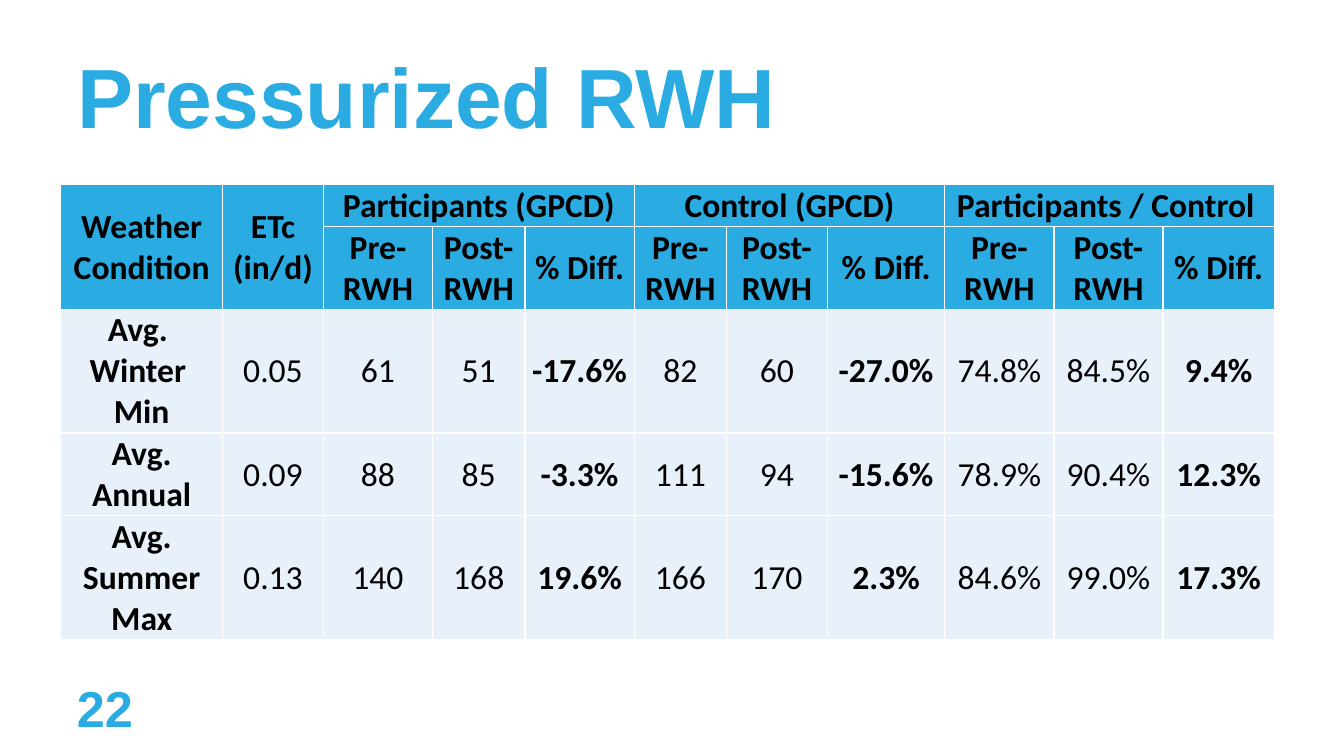
from dataclasses import dataclass

from lxml import etree
from pptx import Presentation
from pptx.dml.color import RGBColor
from pptx.enum.text import MSO_ANCHOR, MSO_AUTO_SIZE, PP_ALIGN
from pptx.oxml.ns import qn
from pptx.util import Cm, Pt

BLUE = RGBColor(0x2A, 0xAC, 0xE3)
PALE = RGBColor(0xE8, 0xF1, 0xFA)
BLACK = RGBColor(0, 0, 0)
WHITE = RGBColor(0xFF, 0xFF, 0xFF)
LEFT, CENTER = PP_ALIGN.LEFT, PP_ALIGN.CENTER
MIDDLE, TOP = MSO_ANCHOR.MIDDLE, MSO_ANCHOR.TOP
FIXED = MSO_AUTO_SIZE.NONE

LINE = 1.03  # height of one text line in the table, cm
WIDTHS = (4.08, 2.54, 2.75, 2.33, 2.75, 2.33, 2.54, 2.96, 2.75, 2.75, 2.8)
HEADS = ("Weather Condition", "ETc (in/d)")
GROUPS = ("Participants (GPCD)", "Control (GPCD)", "Participants / Control ")
PARTS = ("Pre-RWH", "Post-RWH", "% Diff.")


@dataclass
class Season:
    name: str
    lines: int
    values: tuple[str, ...]


SEASONS = (
    Season("Avg. \nWinter \nMin", 3,
           ("0.05", "61", "51", "-17.6%", "82", "60", "-27.0%",
            "74.8%", "84.5%", "9.4%")),
    Season("Avg. Annual", 2,
           ("0.09", "88", "85", "-3.3%", "111", "94", "-15.6%",
            "78.9%", "90.4%", "12.3%")),
    Season("Avg. Summer Max", 3,
           ("0.13", "140", "168", "19.6%", "166", "170", "2.3%",
            "84.6%", "99.0%", "17.3%")),
)


def write(frame, text: str, *, size: int, font: str, color: RGBColor,
          bold: bool = True, align=LEFT, spacing: float = 1.0) -> None:
    frame.word_wrap = True
    frame.text = text
    for para in frame.paragraphs:
        para.alignment = align
        para.line_spacing = spacing
        for run in para.runs:
            run.font.size = Pt(size)
            run.font.name = font
            run.font.bold = bold
            run.font.color.rgb = color


def edge(cell) -> None:
    """Give a cell a thin white line on all four sides."""
    props = cell._tc.get_or_add_tcPr()
    for side in ("lnL", "lnR", "lnT", "lnB"):
        line = etree.SubElement(props, qn(f"a:{side}"), w=str(Pt(1)))
        fill = etree.SubElement(line, qn("a:solidFill"))
        etree.SubElement(fill, qn("a:srgbClr"), val=str(WHITE))


def fill_cell(cell, text: str, bold: bool) -> None:
    write(cell.text_frame, text, size=24, font="Calibri", color=BLACK,
          bold=bold, align=CENTER)


def add_grid(slide) -> None:
    heights = [LINE * n for n in (1, 2, *(s.lines for s in SEASONS))]
    grid = slide.shapes.add_table(
        len(heights), len(WIDTHS), Cm(1.53), Cm(4.65),
        Cm(sum(WIDTHS)), Cm(sum(heights))).table
    for col, width in zip(grid.columns, WIDTHS):
        col.width = Cm(width)
    for index, height in enumerate(heights):
        grid.rows[index].height = Cm(height)
        for cell in grid.rows[index].cells:
            edge(cell)
            cell.fill.solid()
            cell.fill.fore_color.rgb = BLUE if index < 2 else PALE
            cell.vertical_anchor = MIDDLE
            cell.margin_left = cell.margin_right = cell.margin_top = Cm(0.02)
            cell.margin_bottom = 0

    for col, text in enumerate(HEADS):
        grid.cell(0, col).merge(grid.cell(1, col))
        fill_cell(grid.cell(0, col), text, True)
    for index, group in enumerate(GROUPS):
        first = len(HEADS) + index * len(PARTS)
        grid.cell(0, first).merge(grid.cell(0, first + len(PARTS) - 1))
        fill_cell(grid.cell(0, first), group, True)
        for step, part in enumerate(PARTS):
            fill_cell(grid.cell(1, first + step), part, True)
    for row, season in enumerate(SEASONS, 2):
        fill_cell(grid.cell(row, 0), season.name, True)
        for col, value in enumerate(season.values, 1):
            fill_cell(grid.cell(row, col), value, col > 1 and col % 3 == 1)


def main() -> None:
    deck = Presentation()
    deck.slide_width, deck.slide_height = Cm(33.87), Cm(19.05)
    slide = deck.slides.add_slide(deck.slide_layouts[5])

    title = slide.shapes.title
    title.left, title.top = Cm(1.69), Cm(1.27)
    title.width, title.height = Cm(30.48), Cm(2.54)
    title.text_frame.auto_size = FIXED
    title.text_frame.vertical_anchor = MIDDLE
    write(title.text_frame, "Pressurized RWH", size=60, font="Arial",
          color=BLUE, spacing=0.9)

    add_grid(slide)

    page = slide.shapes.add_textbox(Cm(1.69), Cm(16.94), Cm(2.75), Cm(1.8))
    page.text_frame.vertical_anchor = TOP
    write(page.text_frame, "22", size=36, font="Arial", color=BLUE)

    deck.save("out.pptx")


if __name__ == "__main__":
    main()
